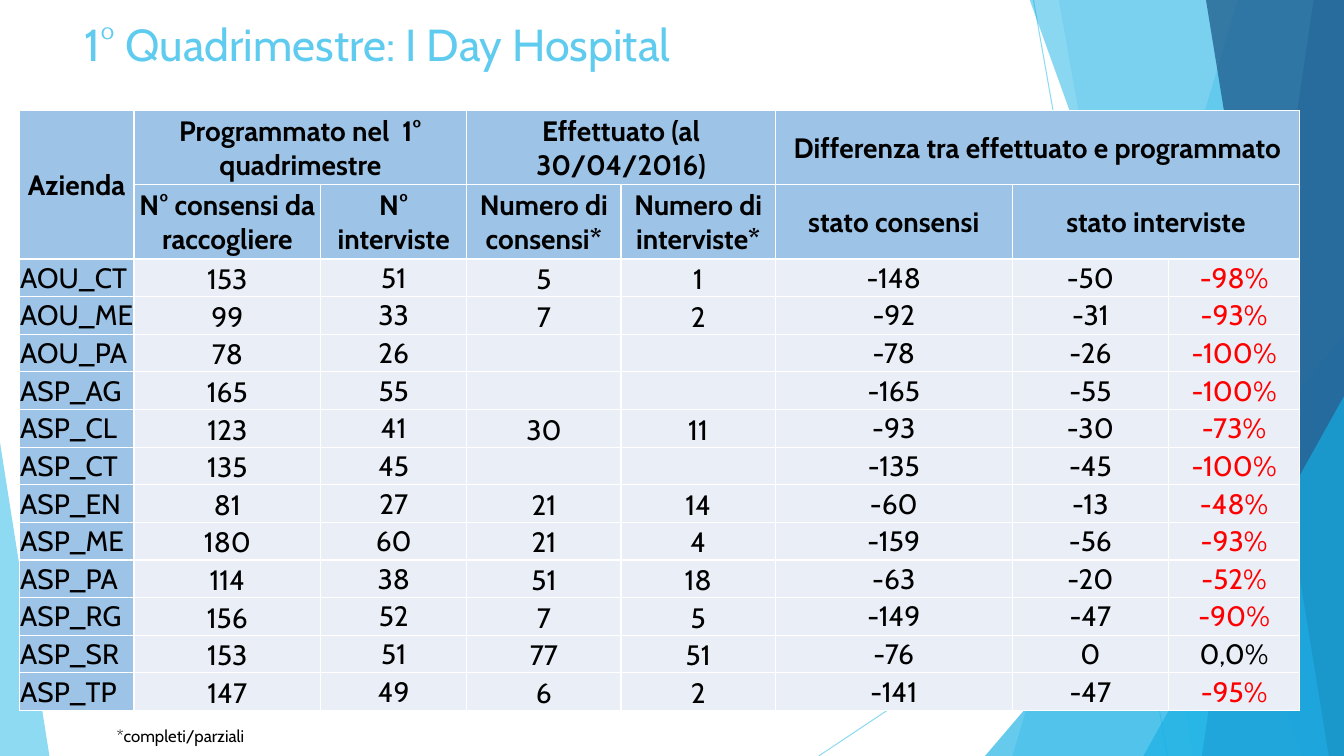
from lxml.etree import SubElement
from pptx import Presentation
from pptx.dml.color import RGBColor
from pptx.enum.shapes import MSO_CONNECTOR
from pptx.enum.text import MSO_ANCHOR, MSO_AUTO_SIZE, PP_ALIGN
from pptx.oxml.ns import qn
from pptx.util import Inches, Pt

FONT = "Cabin"
COLORS = {
    "white": "FFFFFF", "black": "000000", "red": "FF0000",
    "sky": "5FCBEF", "azure": "17B0E4", "blue": "2E83C3", "navy": "236292",
    "header": "9DC3E6", "body": "EAEFF7",
}

WIDTH, HEIGHT = 13.33, 7.5
TOP = -0.01
RAYS = [((10.25, 0), (11.58, HEIGHT)), ((WIDTH, 4.03), (8.12, HEIGHT))]
RIGHT_BANDS = [
    (12.28, TOP, 10.04, "sky", 36),
    (10.5, TOP, 11.83, "sky", 20),
    (WIDTH, 3.33, 9.77, "azure", 66),
    (10.21, TOP, 12.91, "azure", 50),
    (13.03, TOP, 11.92, "blue", 70),
    (11.96, TOP, 13.18, "navy", 80),
    (WIDTH, 3.93, 11.34, "azure", 66),
]

TABLE_LEFT, TABLE_TOP, TABLE_HEIGHT = 0.19, 1.1, 5.95
COLUMN_WIDTHS = [1.14, 1.85, 1.45, 1.53, 1.53, 2.35, 1.55, 1.3]
HEADER_HEIGHTS = [0.73, 0.74]
BOTTOM_COLUMNS = (1, 3, 4)
HEADERS = [
    (0, 0, 2, 1, "Azienda"),
    (0, 1, 1, 2, "Programmato nel  1° quadrimestre"),
    (0, 3, 1, 2, "Effettuato (al 30/04/2016)"),
    (0, 5, 1, 3, "Differenza tra effettuato e programmato"),
    (1, 1, 1, 1, "N° consensi da raccogliere"),
    (1, 2, 1, 1, "N° interviste"),
    (1, 3, 1, 1, "Numero di consensi*"),
    (1, 4, 1, 1, "Numero di interviste*"),
    (1, 5, 1, 1, "stato consensi"),
    (1, 6, 1, 2, "stato interviste"),
]
RESULTS = [
    ("AOU_CT", "153", "51", "5", "1", "-148", "-50", "-98%"),
    ("AOU_ME", "99", "33", "7", "2", "-92", "-31", "-93%"),
    ("AOU_PA", "78", "26", "", "", "-78", "-26", "-100%"),
    ("ASP_AG", "165", "55", "", "", "-165", "-55", "-100%"),
    ("ASP_CL", "123", "41", "30", "11", "-93", "-30", "-73%"),
    ("ASP_CT", "135", "45", "", "", "-135", "-45", "-100%"),
    ("ASP_EN", "81", "27", "21", "14", "-60", "-13", "-48%"),
    ("ASP_ME", "180", "60", "21", "4", "-159", "-56", "-93%"),
    ("ASP_PA", "114", "38", "51", "18", "-63", "-20", "-52%"),
    ("ASP_RG", "156", "52", "7", "5", "-149", "-47", "-90%"),
    ("ASP_SR", "153", "51", "77", "51", "-76", "0", "0,0%"),
    ("ASP_TP", "147", "49", "6", "2", "-141", "-47", "-95%"),
]


def grid(*steps):
    """Turn steps of the one-inch slide grid into lengths."""
    return [Inches(step) for step in steps]


def rgb(name):
    """Look up a named colour."""
    return RGBColor.from_string(COLORS[name])


def set_opacity(shape, percent):
    """Make every colour of a shape partly transparent."""
    for color in shape.element.spPr.iter(qn("a:srgbClr")):
        SubElement(color, qn("a:alpha"), val=str(percent * 1000))


def add_ray(page, start, end):
    """Draw a thin, translucent background line."""
    ray = page.shapes.add_connector(MSO_CONNECTOR.STRAIGHT, *grid(*start, *end))
    ray.line.color.rgb = rgb("sky")
    ray.line.width = Pt(0.75)
    set_opacity(ray, 70)
    SubElement(ray.element.spPr, qn("a:effectLst"))


def add_facet(page, points, color, opacity):
    """Draw a translucent background polygon."""
    start, *others = [grid(*point) for point in points]
    builder = page.shapes.build_freeform(*start)
    builder.add_line_segments(others, close=True)
    facet = builder.convert_to_shape()
    facet.shadow.inherit = False
    facet.fill.solid()
    facet.fill.fore_color.rgb = rgb(color)
    facet.line.fill.background()
    set_opacity(facet, opacity)


def add_background(page):
    """Draw the rays and facets behind the content."""
    for start, end in RAYS:
        add_ray(page, start, end)
    for upper, top, lower, color, opacity in RIGHT_BANDS:
        points = [(upper, top), (WIDTH, top), (WIDTH, HEIGHT), (lower, HEIGHT)]
        if upper == WIDTH:
            points.pop(0)
        add_facet(page, points, color, opacity)
    add_facet(page, [(0, HEIGHT), (0, 4.39), (0.49, HEIGHT)], "sky", 70)


def style_text(para, size, color, bold=False):
    """Format the runs of a paragraph."""
    for span in para.runs:
        span.font.name = FONT
        span.font.size = Pt(size)
        span.font.bold = bold
        span.font.color.rgb = rgb(color)


def add_label(page, place, text, size, color, wrap):
    """Add a line of text outside the table."""
    box = page.shapes.add_textbox(*grid(*place))
    frame = box.text_frame
    frame.text = text
    frame.word_wrap = wrap
    frame.auto_size = MSO_AUTO_SIZE.NONE if wrap else MSO_AUTO_SIZE.SHAPE_TO_FIT_TEXT
    style_text(frame.paragraphs[0], size, color)


def style_cell(cell, fill):
    """Set the fill, margins and white borders of a cell."""
    cell.fill.solid()
    cell.fill.fore_color.rgb = rgb(fill)
    cell.margin_left, cell.margin_top, cell.margin_right, cell.margin_bottom = grid(0.01, 0.01, 0.01, 0)
    properties = cell._tc.get_or_add_tcPr()
    for index, side in enumerate(("lnL", "lnR", "lnT", "lnB")):
        border = SubElement(properties, qn(f"a:{side}"), w=str(Pt(1)))
        paint = SubElement(border, qn("a:solidFill"))
        SubElement(paint, qn("a:srgbClr"), val=COLORS["white"])
        properties.insert(index, border)


def write_cell(cell, text, color="black", bold=False, align=PP_ALIGN.CENTER, anchor=MSO_ANCHOR.MIDDLE):
    """Write and format the text of a cell."""
    cell.text_frame.text = text
    cell.vertical_anchor = anchor
    para = cell.text_frame.paragraphs[0]
    para.alignment = align
    style_text(para, 20, color, bold)


def add_results_table(page):
    """Build the table of planned and completed interviews."""
    row_height = (TABLE_HEIGHT - sum(HEADER_HEIGHTS)) / len(RESULTS)
    heights = HEADER_HEIGHTS + [row_height] * len(RESULTS)
    place = grid(TABLE_LEFT, TABLE_TOP, sum(COLUMN_WIDTHS), TABLE_HEIGHT)
    table = page.shapes.add_table(len(heights), len(COLUMN_WIDTHS), *place).table
    table.first_row = table.horz_banding = False
    for column, width in zip(table.columns, grid(*COLUMN_WIDTHS)):
        column.width = width
    for row_index, height in enumerate(grid(*heights)):
        table.rows[row_index].height = height
        for column_index, cell in enumerate(table.rows[row_index].cells):
            is_header = row_index < len(HEADER_HEIGHTS) or column_index == 0
            style_cell(cell, "header" if is_header else "body")
    for row, column, down, across, text in HEADERS:
        cell = table.cell(row, column)
        if down * across > 1:
            cell.merge(table.cell(row + down - 1, column + across - 1))
        write_cell(cell, text, bold=True)
    for row, values in enumerate(RESULTS, len(HEADER_HEIGHTS)):
        for column, text in enumerate(values):
            color = "red" if text.startswith("-") and text.endswith("%") else "black"
            align = PP_ALIGN.CENTER if column else PP_ALIGN.LEFT
            anchor = MSO_ANCHOR.BOTTOM if column in BOTTOM_COLUMNS else MSO_ANCHOR.MIDDLE
            write_cell(table.cell(row, column), text, color, align=align, anchor=anchor)


def main():
    """Build and save the slide."""
    deck = Presentation()
    deck.slide_width, deck.slide_height = grid(WIDTH, HEIGHT)
    page = deck.slides.add_slide(deck.slide_layouts[6])
    add_background(page)
    add_label(page, (0.74, 0.12, 9.4, 0.59), "1° Quadrimestre: I Day Hospital", 32, "sky", True)
    add_results_table(page)
    add_label(page, (1.06, 7.15, 1.57, 0.3), "*completi/parziali", 12, "black", False)
    deck.save("out.pptx")


if __name__ == "__main__":
    main()
